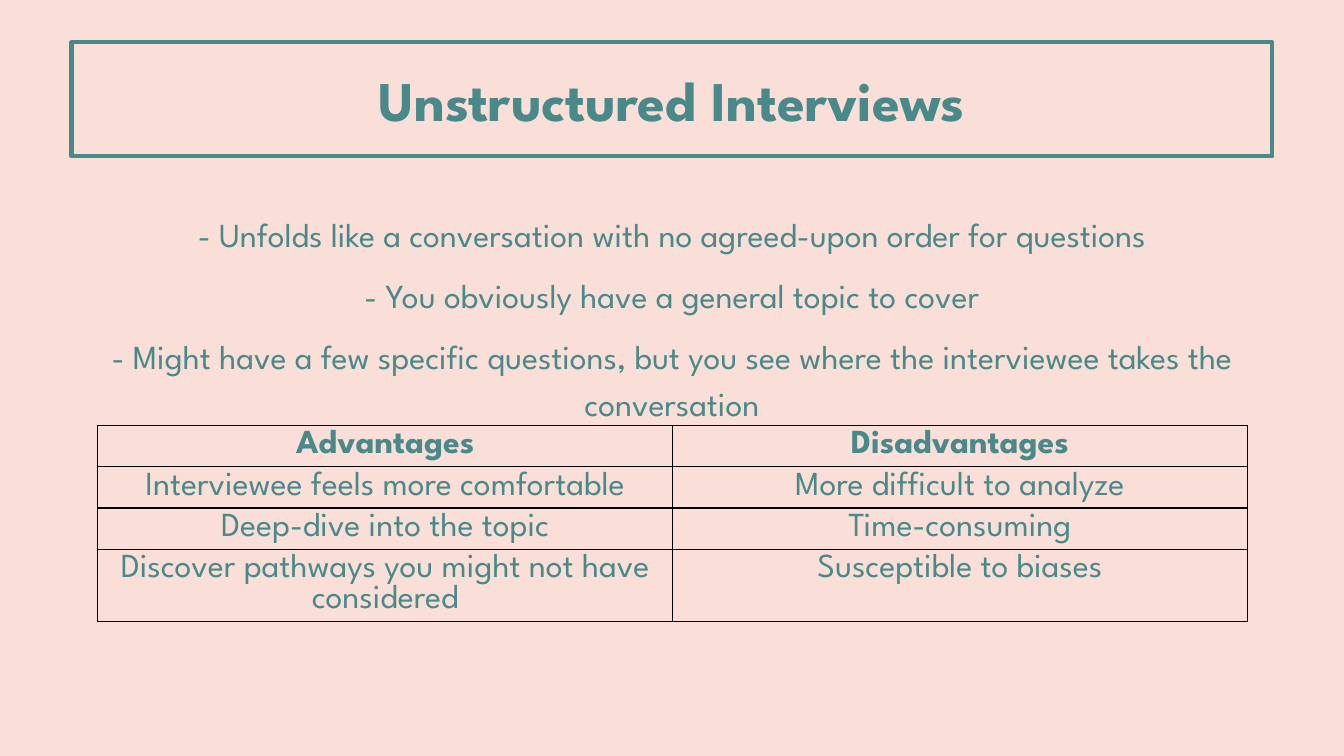
import pptx
import pptx.util
import pptx.dml.color
import pptx.enum.text
import pptx.oxml
from lxml import etree

Inches, Pt = pptx.util.Inches, pptx.util.Pt
FONT = "League Spartan"
TEAL, PINK, BLACK = "49898A", "FADFD8", "000000"

heading = "Unstructured Interviews"
points = [
    "- Unfolds like a conversation with no agreed-upon order for questions",
    "- You obviously have a general topic to cover",
    "- Might have a few specific questions, but you see where the interviewee takes the conversation",
]
comparison = [
    ("Advantages", "Disadvantages"),
    ("Interviewee feels more comfortable", "More difficult to analyze"),
    ("Deep-dive into the topic", "Time-consuming"),
    ("Discover pathways you might not have considered", "Susceptible to biases"),
]
row_heights = [0.41, 0.41, 0.41, 0.72]
column_width = 5.7


def color(value):
    return pptx.dml.color.RGBColor.from_string(value)


def write(frame, lines, size=24, bold=False, spacing=1.0, before=0,
          anchor=pptx.enum.text.MSO_ANCHOR.TOP):
    frame.word_wrap = True
    frame.vertical_anchor = anchor
    for index, line in enumerate(lines):
        paragraph = frame.add_paragraph() if index else frame.paragraphs[0]
        paragraph.alignment = pptx.enum.text.PP_ALIGN.CENTER
        paragraph.line_spacing = spacing
        paragraph.space_before = Pt(before if index else 0)
        run = paragraph.add_run()
        run.text = line
        run.font.name = FONT
        run.font.size = Pt(size)
        run.font.bold = bold
        run.font.color.rgb = color(TEAL)


def place(holder, left, top, width, height):
    holder.left, holder.top = Inches(left), Inches(top)
    holder.width, holder.height = Inches(width), Inches(height)
    holder.text_frame.auto_size = pptx.enum.text.MSO_AUTO_SIZE.NONE


def add_borders(cell):
    properties = cell._tc.get_or_add_tcPr()
    for position, side in enumerate(("lnL", "lnR", "lnT", "lnB")):
        border = pptx.oxml.parse_xml(
            f'<a:{side} xmlns:a="http://schemas.openxmlformats.org/drawingml/2006/main" w="{Pt(1)}">'
            f'<a:solidFill><a:srgbClr val="{BLACK}"/></a:solidFill></a:{side}>')
        properties.insert(position, border)


def main():
    deck = pptx.Presentation()
    deck.slide_width, deck.slide_height = Inches(13.33), Inches(7.5)
    slide = deck.slides.add_slide(deck.slide_layouts[0])
    slide.background.fill.solid()
    slide.background.fill.fore_color.rgb = color(PINK)

    title = slide.shapes.title
    place(title, 0.71, 0.42, 11.91, 1.13)
    title.line.color.rgb = color(TEAL)
    title.line.width = Pt(3)
    write(title.text_frame, [heading], size=40, bold=True,
          anchor=pptx.enum.text.MSO_ANCHOR.MIDDLE)

    body = slide.placeholders[1]
    place(body, 0.71, 2, 11.91, 2.22)
    write(body.text_frame, points, spacing=1.17, before=10)

    table = slide.shapes.add_table(
        len(comparison), 2, Inches(0.97), Inches(4.22),
        Inches(2 * column_width), Inches(sum(row_heights))).table
    table.horz_banding = False
    for column in table.columns:
        column.width = Inches(column_width)
    for row_index, (row, height) in enumerate(zip(comparison, row_heights)):
        table.rows[row_index].height = Inches(height)
        for column_index, entry in enumerate(row):
            cell = table.cell(row_index, column_index)
            cell.fill.background()
            add_borders(cell)
            write(cell.text_frame, [entry], bold=row_index == 0)

    deck.save("out.pptx")


if __name__ == "__main__":
    main()
